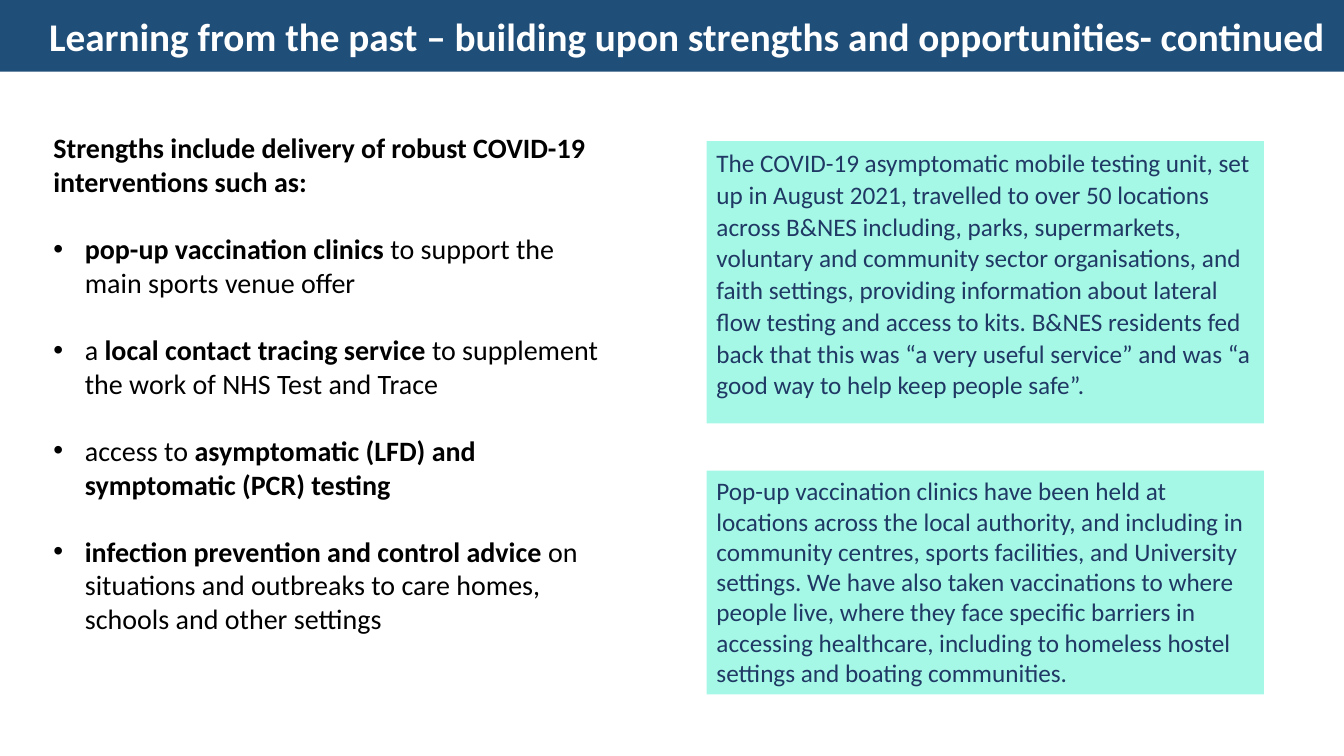
from pptx import Presentation
from pptx.dml.color import RGBColor
from pptx.enum.shapes import MSO_SHAPE
from pptx.enum.text import MSO_ANCHOR, PP_ALIGN
from pptx.oxml.xmlchemy import OxmlElement
from pptx.util import Pt

TITLE = "Learning from the past – building upon strengths and opportunities- continued"
INTRO = "Strengths include delivery of robust COVID-19 interventions such as:"
STRENGTHS = [
    [("pop-up vaccination clinics ", True), ("to support the main sports venue offer", False)],
    [("a ", False), ("local contact tracing service ", True),
     ("to supplement the work of NHS Test and Trace", False)],
    [("access to ", False), ("asymptomatic (LFD) and symptomatic (PCR) testing", True)],
    [("infection prevention and control advice ", True),
     ("on situations and outbreaks to care homes, schools and other settings", False)],
]
TESTING = (
    "The COVID-19 asymptomatic mobile testing unit, set up in August 2021, travelled to over "
    "50 locations across B&NES including, parks, supermarkets, voluntary and community sector "
    "organisations, and faith settings, providing information about lateral flow testing and "
    "access to kits. B&NES residents fed back that this was “a very useful service” and was "
    "“a good way to help keep people safe”."
)
CLINICS = (
    "Pop-up vaccination clinics have been held at locations across the local authority, and "
    "including in community centres, sports facilities, and University settings. We have also "
    "taken vaccinations to where people live, where they face specific barriers in accessing "
    "healthcare, including to homeless hostel settings and boating communities."
)
PANELS = [(TESTING, 100.8, 201.6, 1.05), (CLINICS, 336.2, 159.8, 1.0)]

WIDTH, HEIGHT = 960, 540
PANEL_LEFT, PANEL_WIDTH = 504.7, 398.2
NAVY, INK, MINT, WHITE, BLACK = "1F4E79", "1F3864", "A6F8E6", "FFFFFF", "000000"


def color(value):
    """Turn a hex string into a colour."""
    return RGBColor.from_string(value)


def add_panel(page, left, top, width, height, fill):
    """Add a plain filled rectangle ready for text."""
    panel = page.shapes.add_shape(
        MSO_SHAPE.RECTANGLE, Pt(left), Pt(top), Pt(width), Pt(height))
    panel.shadow.inherit = False
    panel.fill.solid()
    panel.fill.fore_color.rgb = color(fill)
    panel.line.fill.background()
    panel.text_frame.word_wrap = True
    panel.text_frame.vertical_anchor = MSO_ANCHOR.TOP
    return panel


def write(para, spans, size, ink, indent=0, hanging=0, bullet=None, before=0, spacing=1.0):
    """Fill a paragraph with (text, bold) spans in one format."""
    properties = para._p.get_or_add_pPr()
    properties.set("marL", str(Pt(indent)))
    properties.set("indent", str(Pt(hanging)))
    para.alignment = PP_ALIGN.LEFT
    para.line_spacing = spacing
    if before:
        para.space_before = Pt(before)
    if bullet:
        typeface = OxmlElement("a:buFont")
        typeface.set("typeface", "Arial")
        mark = OxmlElement("a:buChar")
        mark.set("char", bullet)
        properties.extend([typeface, mark])
    for text, bold in spans:
        span = para.add_run()
        span.text = text
        span.font.name = "Calibri"
        span.font.size = Pt(size)
        span.font.bold = bold
        span.font.color.rgb = color(ink)


def main():
    """Build the slide and save it."""
    deck = Presentation()
    deck.slide_width, deck.slide_height = Pt(WIDTH), Pt(HEIGHT)
    page = deck.slides.add_slide(deck.slide_layouts[6])

    banner = add_panel(page, 0, 0, WIDTH, 51.1, NAVY).text_frame
    banner.vertical_anchor = MSO_ANCHOR.MIDDLE
    write(banner.paragraphs[0], [(TITLE, True)], 28, WHITE, hanging=28)

    strengths = page.shapes.add_textbox(Pt(31), Pt(90), Pt(406), Pt(392.4)).text_frame
    strengths.word_wrap = True
    write(strengths.paragraphs[0], [(INTRO, True)], 20, BLACK)
    for spans in STRENGTHS:
        write(strengths.add_paragraph(), spans, 20, BLACK,
              indent=22.5, hanging=-22.5, bullet="•", before=24)

    for text, top, height, spacing in PANELS:
        panel = add_panel(page, PANEL_LEFT, top, PANEL_WIDTH, height, MINT)
        write(panel.text_frame.paragraphs[0], [(text, False)], 18, INK, spacing=spacing)

    deck.save("out.pptx")


if __name__ == "__main__":
    main()
